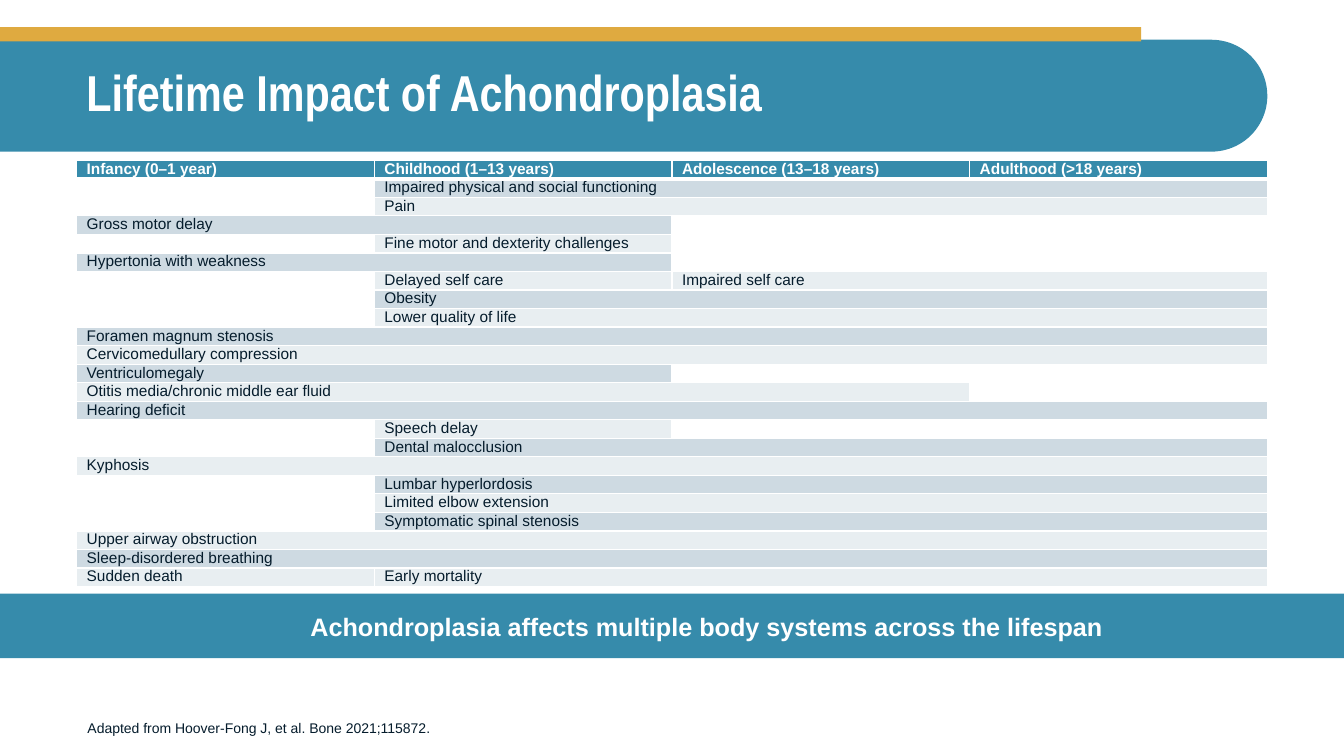
from pptx import Presentation, util as u
from pptx.dml.color import RGBColor
from pptx.enum import shapes, text
from pptx.oxml import parse_xml
from pptx.oxml.ns import nsdecls

TEAL, GOLD, WHITE, INK = "368BAB", "DFAA40", "FFFFFF", "051C2C"
BANDS = ("CEDAE2", "E8EEF1")
STAGES = ["Infancy (0–1 year)", "Childhood (1–13 years)",
          "Adolescence (13–18 years)", "Adulthood (>18 years)"]
# Each row lists its bars as (first stage, number of stages, label).
IMPACTS = [
    [(1, 3, "Impaired physical and social functioning")],
    [(1, 3, "Pain")],
    [(0, 2, "Gross motor delay")],
    [(1, 1, "Fine motor and dexterity challenges")],
    [(0, 2, "Hypertonia with weakness")],
    [(1, 1, "Delayed self care"), (2, 2, "Impaired self care")],
    [(1, 3, "Obesity")],
    [(1, 3, "Lower quality of life")],
    [(0, 4, "Foramen magnum stenosis")],
    [(0, 4, "Cervicomedullary compression")],
    [(0, 2, "Ventriculomegaly")],
    [(0, 3, "Otitis media/chronic middle ear fluid")],
    [(0, 4, "Hearing deficit")],
    [(1, 1, "Speech delay")],
    [(1, 3, "Dental malocclusion")],
    [(0, 4, "Kyphosis")],
    [(1, 3, "Lumbar hyperlordosis")],
    [(1, 3, "Limited elbow extension")],
    [(1, 3, "Symptomatic spinal stenosis")],
    [(0, 4, "Upper airway obstruction")],
    [(0, 4, "Sleep-disordered breathing")],
    [(0, 1, "Sudden death"), (1, 3, "Early mortality")],
]


def rgb(color):
    return RGBColor.from_string(color)


def write(tf, words, size=11, color=INK, bold=False, font="Arial",
          align=text.PP_ALIGN.LEFT, spacing=None, indent=None):
    p = tf.paragraphs[0]
    p.alignment = align
    if spacing:
        p.line_spacing = spacing
    if indent:
        p._p.get_or_add_pPr().set("marL", str(u.Inches(indent)))
    r = p.add_run()
    r.text = words
    r.font.size, r.font.bold, r.font.name = u.Pt(size), bold, font
    r.font.color.rgb = rgb(color)


class Deck:
    """Slide builder whose lengths are percentages of the slide's size."""

    def __init__(self):
        self.prs = Presentation()
        self.prs.slide_width = u.Inches(13.33)
        self.prs.slide_height = u.Inches(7.5)
        self.s = self.prs.slides.add_slide(self.prs.slide_layouts[6])

    def x(self, share):
        return round(self.prs.slide_width * share / 100)

    def y(self, share):
        return round(self.prs.slide_height * share / 100)

    def box(self, left, top, width, height):
        return self.x(left), self.y(top), self.x(width), self.y(height)

    def paint(self, sp, fill):
        sp.shadow.inherit = False
        sp.fill.solid()
        sp.fill.fore_color.rgb = rgb(fill)
        sp.line.fill.background()
        return sp

    def bar(self, *area, fill):
        sp = self.s.shapes.add_shape(shapes.MSO_SHAPE.RECTANGLE, *self.box(*area))
        return self.paint(sp, fill)

    def banner(self, *area, fill):
        """Bar with a rounded right end: a shape with round bottom corners, turned."""
        left, top, width, height = self.box(*area)
        shift = (width - height) // 2
        sp = self.s.shapes.add_shape(shapes.MSO_SHAPE.ROUND_2_SAME_RECTANGLE,
                                     left + shift, top - shift, height, width)
        sp.adjustments[0], sp.adjustments[1] = 0, 0.5
        sp.rotation = 270
        return self.paint(sp, fill)

    def label(self, *area, words, anchor, **style):
        tf = self.s.shapes.add_textbox(*self.box(*area)).text_frame
        tf.word_wrap = True
        tf.vertical_anchor = anchor
        write(tf, words, **style)

    def cell(self, cell, fill, bottom=1):
        """Set fill, margins and white borders, and keep empty cells low."""
        cell.margin_left = cell.margin_right = u.Inches(0.1)
        cell.margin_top = cell.margin_bottom = 0
        for side, width in (("L", 1), ("R", 1), ("T", 1), ("B", bottom)):
            cell._tc.get_or_add_tcPr().append(parse_xml(
                f'<a:ln{side} {nsdecls("a")} w="{u.Pt(width)}"><a:solidFill>'
                f'<a:srgbClr val="{WHITE}"/></a:solidFill></a:ln{side}>'))
        cell.fill.solid()
        cell.fill.fore_color.rgb = rgb(fill)
        p = cell.text_frame.paragraphs[0]._p
        p.get_or_add_endParaRPr().set("sz", "1100")

    def timeline(self, left, top, width, row_height, stages, impacts):
        rows, cols = len(impacts) + 1, len(stages)
        area = self.box(left, top, width, row_height * rows)
        table = self.s.shapes.add_table(rows, cols, *area).table
        table.horz_banding = False
        for row in table.rows:
            row.height = self.y(row_height)
        for col, stage in enumerate(stages):
            self.cell(table.cell(0, col), TEAL, bottom=3)
            write(table.cell(0, col).text_frame, stage, color=WHITE, bold=True)
        for row, bars in enumerate(impacts, 1):
            fills = [WHITE] * cols
            for first, span, _ in bars:
                fills[first:first + span] = [BANDS[(row - 1) % 2]] * span
            for col, fill in enumerate(fills):
                self.cell(table.cell(row, col), fill)
            for first, span, words in bars:
                start = table.cell(row, first)
                if span > 1:
                    start.merge(table.cell(row, first + span - 1))
                write(start.text_frame, words)


def main():
    deck = Deck()
    deck.banner(0, 5.25, 94.3, 14.8, fill=TEAL)
    deck.bar(0, 3.6, 84.92, 1.87, fill=GOLD)
    deck.label(5.7, 5.2, 88.6, 14.67, words="Lifetime Impact of Achondroplasia",
               anchor=text.MSO_ANCHOR.MIDDLE, size=36, color=WHITE, bold=True,
               font="Arial Narrow", spacing=0.9)
    deck.label(5.77, 89.47, 74.1, 8.53, anchor=text.MSO_ANCHOR.BOTTOM, size=10,
               words="Adapted from Hoover-Fong J, et al. Bone 2021;115872.")
    message = deck.bar(0, 78.53, 100, 8.53, fill=TEAL).text_frame
    message.word_wrap = True
    message.vertical_anchor = text.MSO_ANCHOR.MIDDLE
    write(message, "Achondroplasia affects multiple body systems across the lifespan",
          size=18, color=WHITE, bold=True, align=text.PP_ALIGN.CENTER, indent=0.69)
    deck.timeline(5.7, 21.2, 88.6, 2.27, STAGES, IMPACTS)
    deck.prs.save("out.pptx")


if __name__ == "__main__":
    main()
